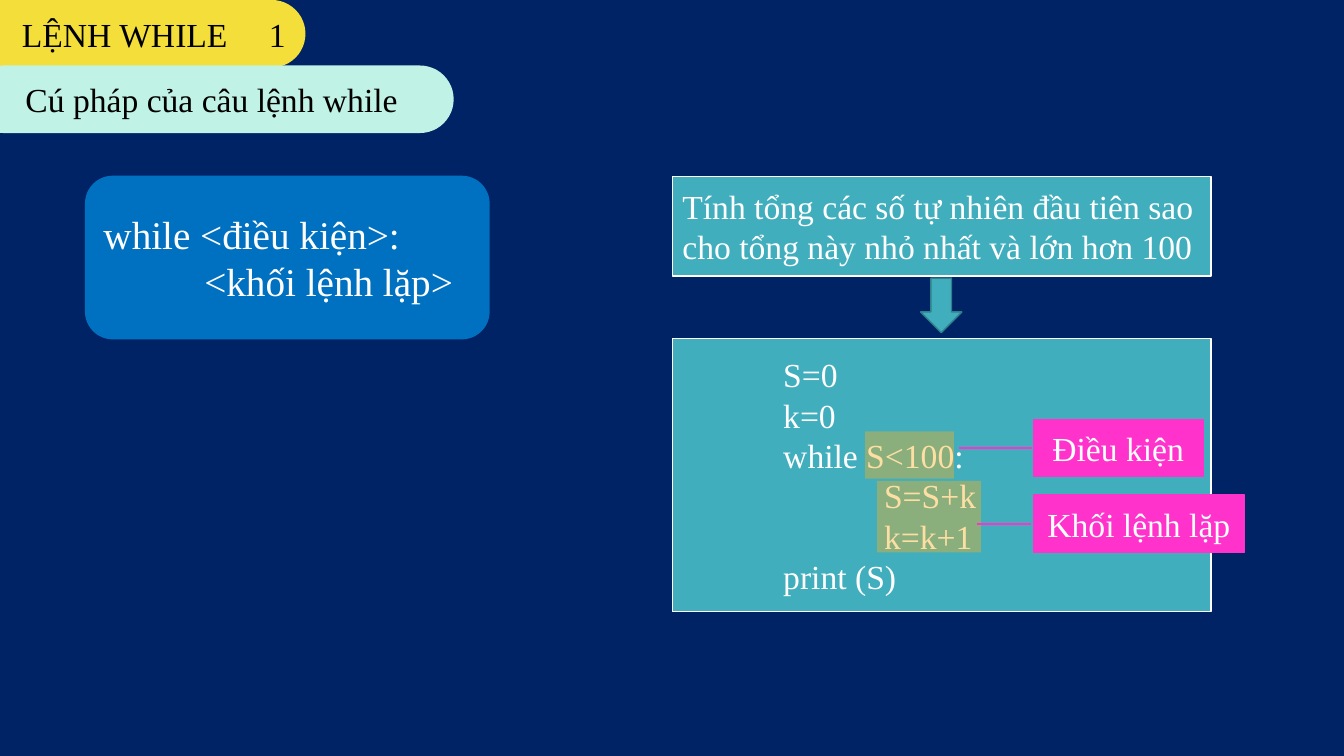
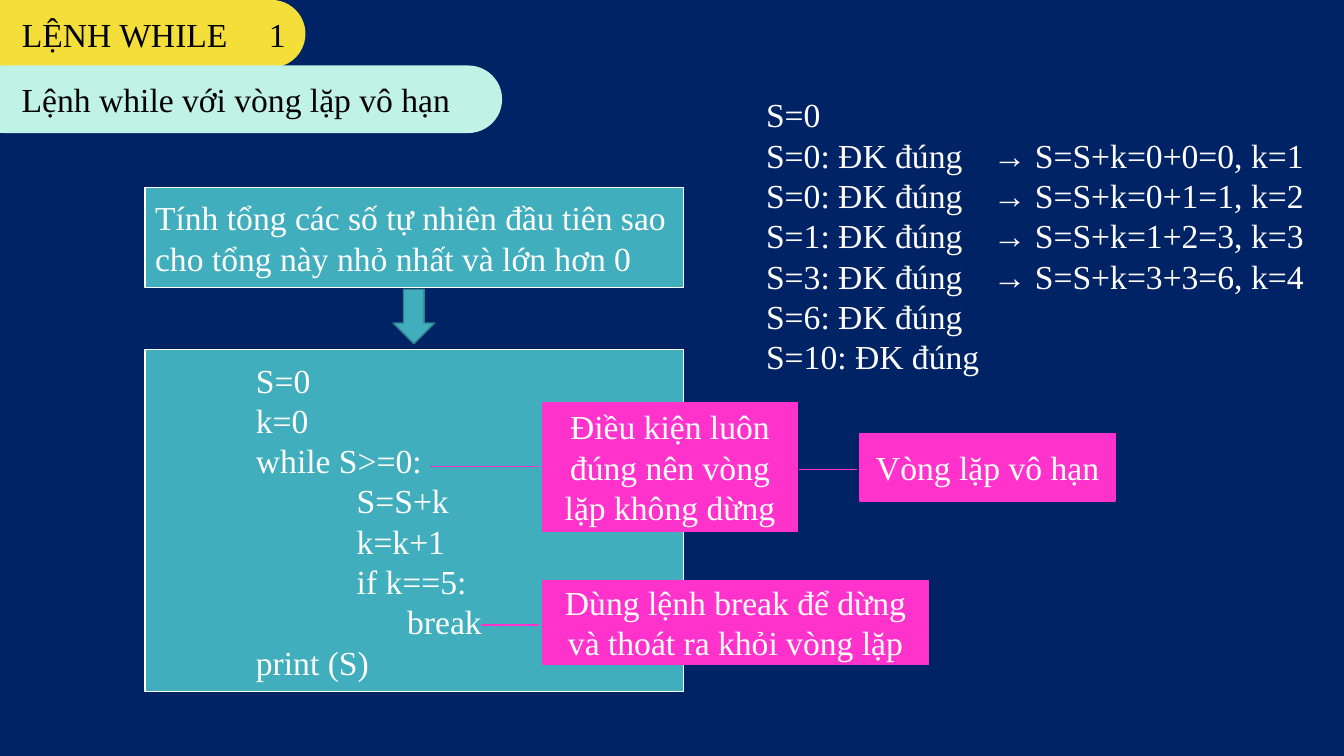
from lxml import etree
from pptx import Presentation
from pptx.dml.color import RGBColor
from pptx.enum.shapes import MSO_SHAPE
from pptx.enum.text import MSO_ANCHOR, PP_ALIGN
from pptx.oxml.ns import qn
from pptx.util import Inches, Pt

RECT = MSO_SHAPE.RECTANGLE
ROUND = MSO_SHAPE.ROUNDED_RECTANGLE
ARROW = MSO_SHAPE.DOWN_ARROW
CALL = MSO_SHAPE.LINE_CALLOUT_1
MIDDLE = MSO_ANCHOR.MIDDLE
LEFT, CENTER = PP_ALIGN.LEFT, PP_ALIGN.CENTER

FONT = "Times New Roman"
NAVY, BLUE, TEAL, EDGE = "002366", "0070C0", "41AEBD", "30818C"
GOLD, MINT, PINK, AMBER = "F4DE3A", "C1F2E6", "FF33CC", "FCB11C"
WHITE, BLACK = "FFFFFF", "000000"


def color(code):
    return RGBColor.from_string(code)


class Deck:
    def __init__(self):
        self.prs = Presentation()
        self.prs.slide_width = Inches(13.33)
        self.prs.slide_height = Inches(7.5)

    def page(self, title, width):
        """Start a slide with its section tab and title band."""
        self.slide = self.prs.slides.add_slide(self.prs.slide_layouts[6])
        fill = self.slide.background.fill
        fill.solid()
        fill.fore_color.rgb = color(NAVY)
        tab = self.shape(ROUND, (-0.33, 0, 3.36, 0.67), GOLD)
        tab.text_frame.margin_left = Inches(0.45)
        tab.text_frame.margin_right = Inches(0.05)
        self.label(tab, ["LỆNH WHILE\t1"], ink=BLACK, stop=2.45)
        band = self.shape(ROUND, (-0.3, 0.65, width, 0.67), MINT)
        self.label(band, [title], CENTER, ink=BLACK)
        for item in (tab, band):
            item.adjustments[0] = 0.5

    def shape(self, kind, box, fill, line=None):
        shape = self.slide.shapes.add_shape(kind, *map(Inches, box))
        shape.shadow.inherit = False
        shape.fill.solid()
        shape.fill.fore_color.rgb = color(fill)
        if line:
            shape.line.color.rgb = color(line)
            shape.line.width = Pt(1)
        else:
            shape.line.fill.background()
        return shape

    def label(self, shape, lines, align=LEFT, size=24, ink=WHITE, stop=None):
        """Fill a shape with lines, each a string or an (indent, string) pair."""
        frame = shape.text_frame
        frame.word_wrap = True
        frame.vertical_anchor = MIDDLE
        for i, line in enumerate(lines):
            indent, text = (0, line) if isinstance(line, str) else line
            para = frame.paragraphs[0] if i == 0 else frame.add_paragraph()
            para.text = text
            para.alignment = align
            props = para._p.get_or_add_pPr()
            if indent:
                props.set("marL", str(Inches(indent)))
                props.set("indent", "0")
            if stop:
                tabs = etree.SubElement(props, qn("a:tabLst"))
                etree.SubElement(tabs, qn("a:tab"), pos=str(Inches(stop)), algn="l")
            para.font.name = FONT
            para.font.size = Pt(size)
            para.font.color.rgb = color(ink)

    def text(self, box, lines, stop):
        self.label(self.slide.shapes.add_textbox(*map(Inches, box)), lines, stop=stop)

    def syntax(self, box, lines):
        self.label(self.shape(ROUND, box, BLUE, BLUE), lines, size=28)

    def task(self, x, y, goal, height, code):
        """Draw a problem, an arrow and the code that solves it."""
        self.label(self.shape(RECT, (x, y, 5.34, 0.99), TEAL, WHITE), [goal])
        self.shape(ARROW, (x + 2.46, y + 1.01, 0.41, 0.54), TEAL, EDGE)
        self.label(self.shape(RECT, (x, y + 1.61, 5.34, height), TEAL, WHITE), code)

    def mark(self, box):
        """Lay a see-through highlight over code."""
        shape = self.shape(RECT, box, AMBER)
        tint = shape.element.xpath(".//a:srgbClr")[0]
        etree.SubElement(tint, qn("a:alpha"), val="40000")

    def note(self, box, text, tip, row=0.5):
        """Add a callout whose line runs left to tip, as a share of its width."""
        shape = self.shape(CALL, box, PINK, PINK)
        for i, value in enumerate((row, -0.01, row, tip)):
            shape.adjustments[i] = value
        self.label(shape, [text], CENTER)


def main():
    deck = Deck()
    start = [(1, "S=0"), (1, "k=0")]
    body = [(2, "S=S+k"), (2, "k=k+1")]
    end = [(1, "print (S)")]
    goal = "Tính tổng các số tự nhiên đầu tiên sao cho tổng này nhỏ nhất và lớn hơn "

    deck.page("Cú pháp của câu lệnh while", 4.8)
    deck.syntax((0.85, 1.75, 4, 1.61),
                ["while <điều kiện>:", (1, "<khối lệnh lặp>")])
    deck.task(6.67, 1.75, goal + "100", 2.71,
              start + [(1, "while S<100:")] + body + end)
    deck.mark((8.58, 4.28, 0.88, 0.47))
    deck.note((10.25, 4.16, 1.68, 0.57), "Điều kiện", -0.44)
    deck.mark((8.7, 4.77, 1.03, 0.71))
    deck.note((10.25, 4.91, 2.09, 0.57), "Khối lệnh lặp", -0.27, 0.51)

    deck.page("Lệnh while với vòng lặp vô hạn", 5.28)
    deck.task(1.44, 1.86, goal + "0", 3.39,
              start + [(1, "while S>=0:")] + body
              + [(2, "if k==5:"), (2.5, "break")] + end)
    deck.note((5.38, 3.99, 2.53, 1.28),
              "Điều kiện luôn đúng nên vòng lặp không dừng", -0.44)
    deck.note((8.53, 4.3, 2.53, 0.67), "Vòng lặp vô hạn", -0.24, 0.53)
    deck.note((5.38, 5.76, 3.83, 0.83),
              "Dùng lệnh break để dừng và thoát ra khỏi vòng lặp", -0.16, 0.53)
    sums = [(0, 0, 0), (0, 1, 1), (1, 2, 3), (3, 3, 6)]
    steps = [f"S={s}: ĐK đúng\t→ S=S+k={s}+{k}={total}, k={k + 1}"
             for s, k, total in sums]
    deck.text((7.5, 0.87, 5.63, 2.93),
              ["S=0"] + steps + ["S=6: ĐK đúng", "S=10: ĐK đúng"], 2.25)
    deck.prs.save("out.pptx")


if __name__ == "__main__":
    main()
